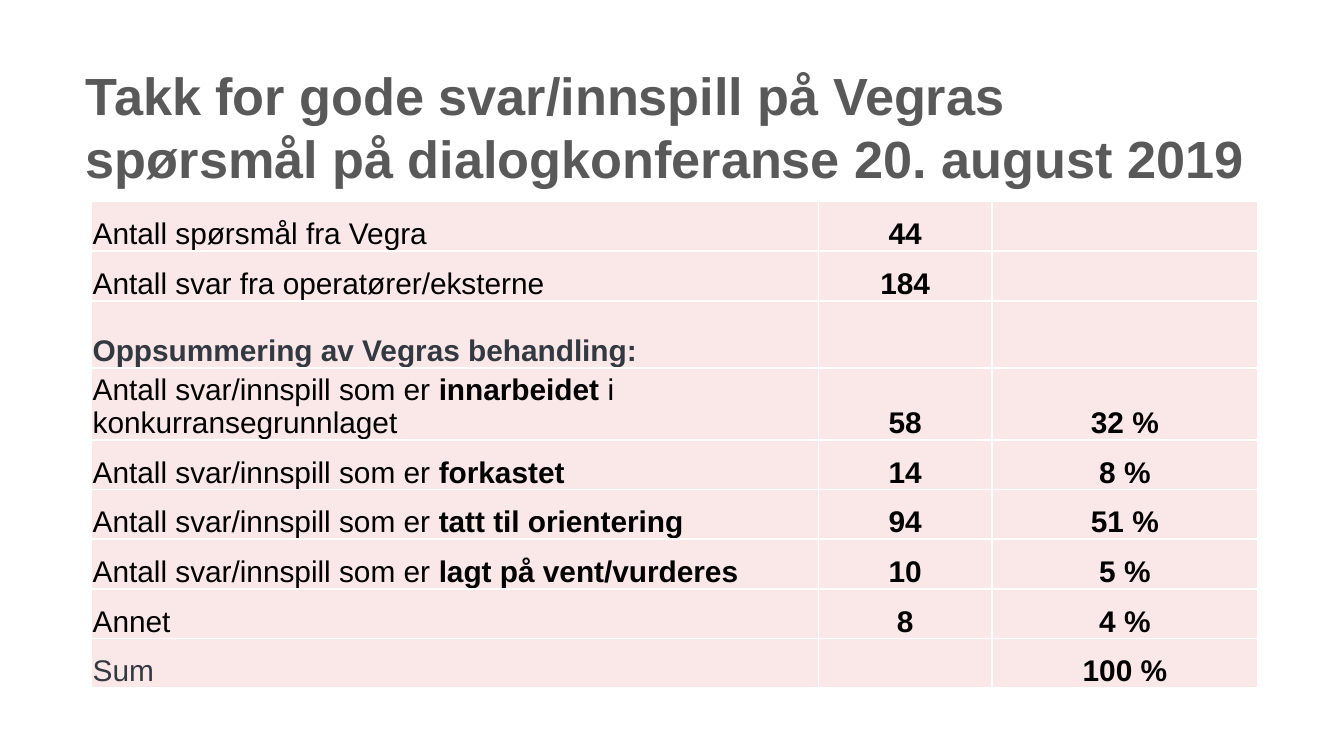
from lxml import etree
from pptx import Presentation
from pptx.dml.color import RGBColor
from pptx.enum.text import MSO_ANCHOR, PP_ALIGN
from pptx.oxml.ns import qn
from pptx.util import Inches, Pt

MIDDLE, BOTTOM = MSO_ANCHOR.MIDDLE, MSO_ANCHOR.BOTTOM
LEFT, CENTER = PP_ALIGN.LEFT, PP_ALIGN.CENTER

BLACK, SLATE, GRAY, PINK, WHITE = "000000", "333941", "595959", "FAE7E7", "FFFFFF"
SLIDE_WIDTH = Inches(10)
SLIDE_HEIGHT = SLIDE_WIDTH * 9 // 16
COLUMN_WIDTHS = [5.41, 1.29, 1.98]
ROW_HEIGHT = 0.37
ANSWERS = "Antall svar/innspill som er "
TITLE = ["Takk for gode svar/innspill på Vegras ", "spørsmål på dialogkonferanse 20. august 2019"]

ROWS = [
    ([("Antall spørsmål fra Vegra", False)], "44", "", BLACK, ROW_HEIGHT),
    ([("Antall svar fra operatører/eksterne", False)], "184", "", BLACK, ROW_HEIGHT),
    ([("Oppsummering av Vegras behandling:", True)], "", "", SLATE, 0.5),
    ([(ANSWERS, False), ("innarbeidet", True), (" i konkurransegrunnlaget", False)],
     "58", "32 %", BLACK, 0.53),
    ([(ANSWERS, False), ("forkastet", True)], "14", "8 %", BLACK, ROW_HEIGHT),
    ([(ANSWERS, False), ("tatt til orientering", True)], "94", "51 %", BLACK, ROW_HEIGHT),
    ([(ANSWERS, False), ("lagt på vent/vurderes", True)], "10", "5 %", BLACK, ROW_HEIGHT),
    ([("Annet", False)], "8", "4 %", BLACK, ROW_HEIGHT),
    ([("Sum", False)], "", "100 %", SLATE, ROW_HEIGHT),
]


def hex_color(value):
    """Turn a hex string into a colour."""
    return RGBColor.from_string(value)


def add_text(paragraph, text, size=16, color=BLACK, bold=False, font="Arial"):
    """Append one formatted run to a paragraph."""
    run = paragraph.add_run()
    run.text = text
    run.font.name = font
    run.font.size = Pt(size)
    run.font.bold = bold
    run.font.color.rgb = hex_color(color)


def add_borders(cell, color, width):
    """Draw a solid line on all four sides of a cell."""
    properties = cell._tc.get_or_add_tcPr()
    for index, side in enumerate(("a:lnL", "a:lnR", "a:lnT", "a:lnB")):
        line = etree.Element(qn(side), w=str(Pt(width)))
        solid = etree.SubElement(line, qn("a:solidFill"))
        etree.SubElement(solid, qn("a:srgbClr"), val=color)
        properties.insert(index, line)


class SlideBuilder:
    """Hold the table style and the current slide."""

    def __init__(self, slide, fill=PINK, border=WHITE):
        """Keep the slide and its colours."""
        self.slide = slide
        self.fill = fill
        self.border = border

    def title(self, lines, left, top, width, height):
        """Add the heading as one paragraph with line breaks."""
        shape = self.slide.shapes.add_textbox(
            Inches(left), Inches(top), Inches(width), Inches(height))
        frame = shape.text_frame
        frame.word_wrap = True
        frame.vertical_anchor = MIDDLE
        frame.margin_left = frame.margin_right = frame.margin_top = frame.margin_bottom = 0
        paragraph = frame.paragraphs[0]
        for index, line in enumerate(lines):
            if index:
                paragraph.add_line_break()
            add_text(paragraph, line, size=28, color=GRAY, bold=True)

    def cell(self, cell, parts, color, alignment):
        """Fill one table cell with text parts."""
        cell.fill.solid()
        cell.fill.fore_color.rgb = hex_color(self.fill)
        cell.vertical_anchor = BOTTOM
        cell.margin_left = cell.margin_right = Inches(0.01)
        cell.margin_top = cell.margin_bottom = 0
        add_borders(cell, self.border, 1)
        paragraph = cell.text_frame.paragraphs[0]
        paragraph.alignment = alignment
        for text, bold in parts:
            add_text(paragraph, text, color=color, bold=bold)

    def table(self, rows, widths, left, top):
        """Add the summary table."""
        height = sum(row[-1] for row in rows)
        table = self.slide.shapes.add_table(
            len(rows), len(widths), Inches(left), Inches(top),
            Inches(sum(widths)), Inches(height)).table
        table.first_row = table.horz_banding = False
        for column, width in zip(table.columns, widths):
            column.width = Inches(width)
        for index, (label, count, share, color, row_height) in enumerate(rows):
            table.rows[index].height = Inches(row_height)
            self.cell(table.cell(index, 0), label, color, LEFT)
            for position, value in enumerate((count, share), start=1):
                parts = [(value, True)] if value else []
                self.cell(table.cell(index, position), parts, BLACK, CENTER)


def main():
    """Build and save the presentation."""
    presentation = Presentation()
    presentation.slide_width, presentation.slide_height = SLIDE_WIDTH, SLIDE_HEIGHT
    builder = SlideBuilder(presentation.slides.add_slide(presentation.slide_layouts[6]))
    builder.title(TITLE, 0.64, 0.47, 8.73, 0.94)
    builder.table(ROWS, COLUMN_WIDTHS, 0.68, 1.5)
    presentation.save("out.pptx")


if __name__ == "__main__":
    main()
